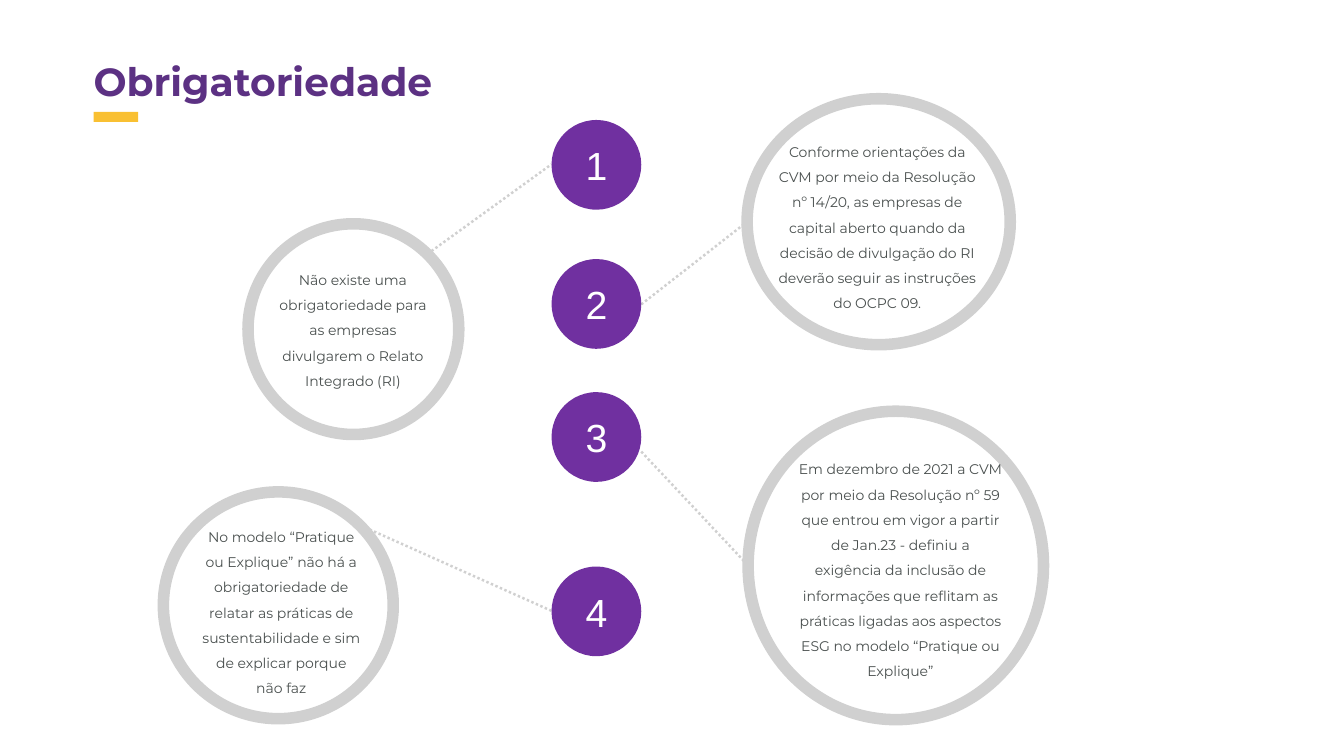
import pptx
import pptx.util
import pptx.dml.color
import pptx.enum.dml
import pptx.enum.shapes
import pptx.enum.text
from lxml import etree

Inches, Pt = pptx.util.Inches, pptx.util.Pt
SHAPE = pptx.enum.shapes.MSO_SHAPE
ALIGN = pptx.enum.text.PP_ALIGN
ANCHOR = pptx.enum.text.MSO_ANCHOR

# Content: number, top of its disc, ring box, text box, dotted line, text
TITLE = "Obrigatoriedade"
ITEMS = [
    ("1", 1.19, (2.46, 2.22, 2.09, 2.09), (2.62, 2.56, 1.76, 1.33),
     (4.24, 2.52, 5.47, 1.63),
     "Não existe uma obrigatoriedade para as empresas divulgarem o Relato "
     "Integrado (RI)"),
    ("2", 2.57, (7.41, 0.98, 2.61, 2.44), (7.59, 1.29, 2.22, 1.84),
     (6.36, 3.02, 7.41, 2.2),
     "Conforme orientações da CVM por meio da Resolução nº 14/20, as empresas "
     "de capital aberto quando da decisão de divulgação do RI deverão seguir "
     "as instruções do OCPC 09."),
    ("3", 3.89, (7.42, 4.08, 2.93, 3.06), (7.82, 4.44, 2.22, 2.34),
     (6.36, 4.48, 7.42, 5.61),
     "Em dezembro de 2021 a CVM por meio da Resolução nº 59 que entrou em "
     "vigor a partir de Jan.23 - definiu a exigência da inclusão de "
     "informações que reflitam as práticas ligadas aos aspectos ESG no modelo "
     "“Pratique ou Explique”"),
    ("4", 5.62, (1.62, 4.88, 2.28, 2.25), (1.91, 5.11, 1.76, 2.09),
     (5.47, 6.06, 3.57, 5.21),
     "No modelo “Pratique ou Explique” não há a obrigatoriedade de relatar as "
     "práticas de sustentabilidade e sim de explicar porque não faz"),
]

# Formats
DISC_X, DISC = 5.47, 0.89
GREY, PURPLE, GOLD, WHITE = "D0D0D0", "7030A0", "F9C032", "FFFFFF"
HEAD = {"name": "Montserrat", "size": Pt(28), "bold": True, "color": "5C3183"}
BODY = {"name": "Montserrat", "size": Pt(10), "color": "4A504F"}
DIGIT = {"name": "Arial", "size": Pt(28), "color": WHITE}
NO_INSET = {"margin_left": 0, "margin_top": 0, "margin_right": 0,
            "margin_bottom": 0, "vertical_anchor": ANCHOR.MIDDLE}

deck = pptx.Presentation()
deck.slide_width, deck.slide_height = Inches(13.33), Inches(7.5)
slide = deck.slides.add_slide(deck.slide_layouts[6])
shapes = slide.shapes


def paint(target, code):
    """Set a colour format from a hex string."""
    target.rgb = pptx.dml.color.RGBColor.from_string(code)


def write(frame, text, style, align=ALIGN.LEFT, gap=None):
    frame.word_wrap = True
    para = frame.paragraphs[0]
    para.alignment, para.line_spacing = align, gap
    run = para.add_run()
    run.text = text
    for key, value in style.items():
        if key == "color":
            paint(run.font.color, value)
        else:
            setattr(run.font, key, value)


def add_text(box, *args):
    write(shapes.add_textbox(*map(Inches, box)).text_frame, *args)


def add_form(kind, box, fill, edge=None):
    form = shapes.add_shape(kind, *map(Inches, box))
    form.shadow.inherit = False
    form.fill.solid()
    paint(form.fill.fore_color, fill)
    if edge:
        paint(form.line.color, edge)
        form.line.width = Pt(8.25)
    else:
        form.line.fill.background()
    return form


def add_dots(ends):
    line = shapes.add_connector(pptx.enum.shapes.MSO_CONNECTOR.STRAIGHT,
                                *map(Inches, ends))
    paint(line.line.color, GREY)
    line.line.width = Pt(1.75)
    line.line.dash_style = pptx.enum.dml.MSO_LINE.ROUND_DOT
    props = line._element.spPr
    etree.SubElement(props, pptx.oxml.ns.qn("a:effectLst"))


# Title and its accent bar
add_text((0.83, 0.52, 9.51, 0.98), TITLE, HEAD)
add_form(SHAPE.RECTANGLE, (0.93, 1.11, 0.44, 0.1), GOLD)

# Numbered discs, each tied to a ring of text
for digit, top, ring, box, ends, text in ITEMS:
    add_form(SHAPE.OVAL, ring, WHITE, GREY)
    add_dots(ends)
    disc = add_form(SHAPE.OVAL, (DISC_X, top, DISC, DISC), PURPLE)
    for key, value in NO_INSET.items():
        setattr(disc.text_frame, key, value)
    write(disc.text_frame, digit, DIGIT, ALIGN.CENTER)
    add_text(box, text, BODY, ALIGN.CENTER, 1.5)

deck.save("out.pptx")
